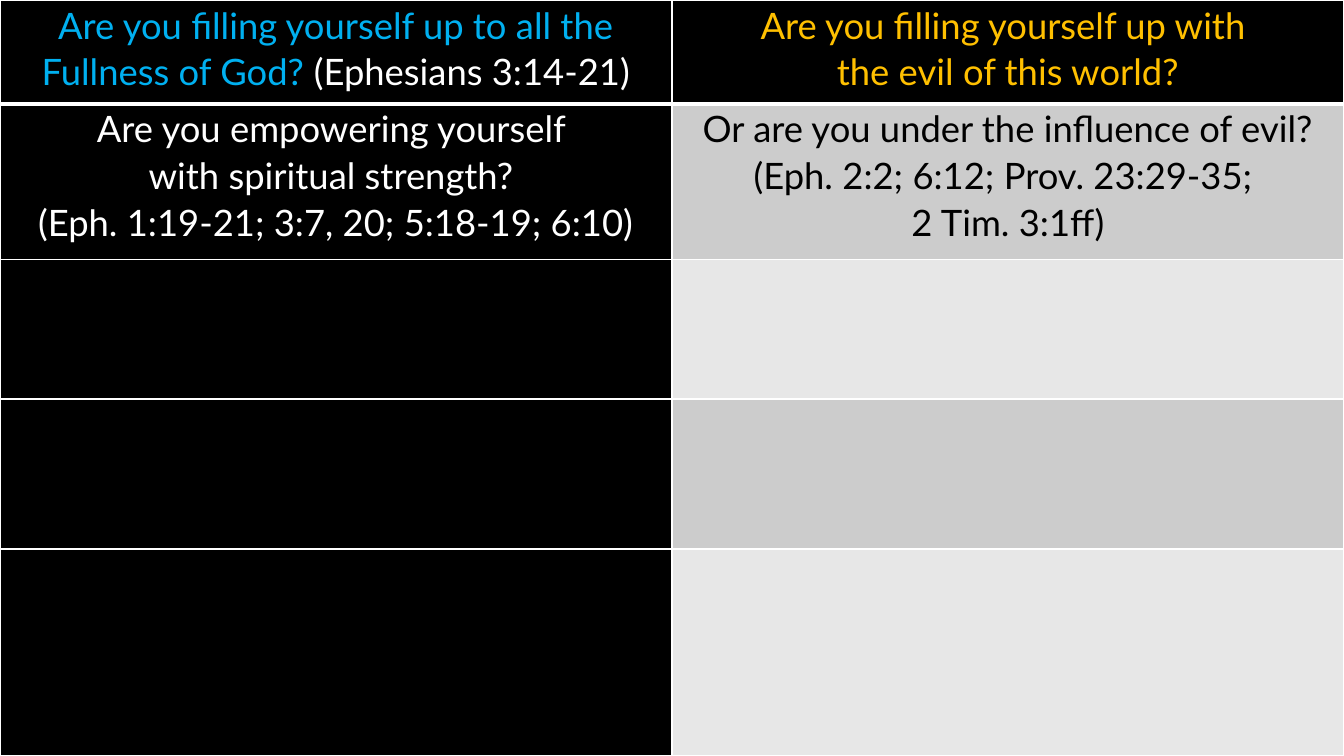
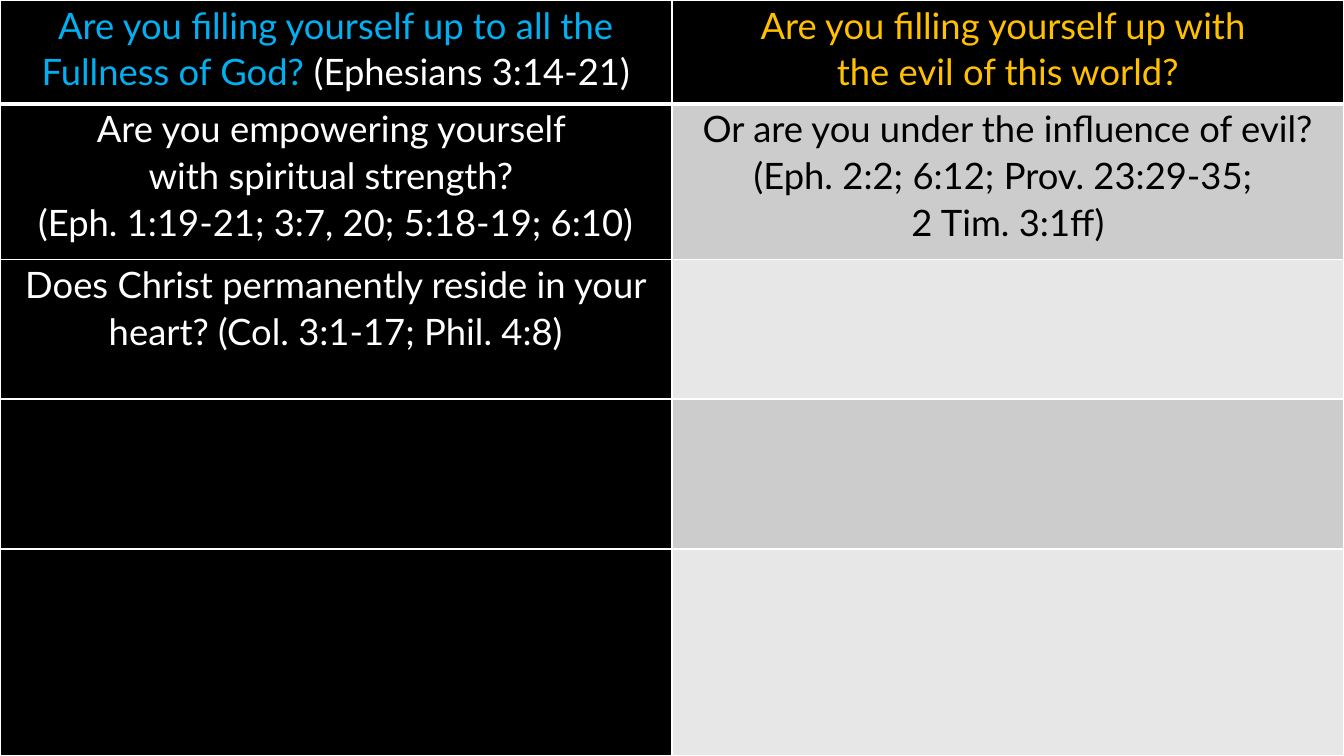
from lxml.etree import SubElement as Sub
from pptx import Presentation
from pptx.dml.color import RGBColor as Rgb
from pptx.enum.text import PP_ALIGN as Align
from pptx.oxml.ns import qn
from pptx.util import Pt

PX = 9525
WIDE, HIGH = 1280, 720
ROWS = [99, 148, 133, 143, 197]
HUES = {
    "black": "000000",
    "white": "FFFFFF",
    "blue": "00B0F0",
    "gold": "FFC000",
    "dark": "CCCCCC",
    "light": "E7E7E7",
}


def write(cell, lines, font="Lato", size=26, align=Align.CENTER, space=1.07):
    frame = cell.text_frame
    for i, line in enumerate(lines):
        para = frame.add_paragraph() if i else frame.paragraphs[0]
        para.alignment = align
        para.line_spacing = space
        for text, hue in line:
            run = para.add_run()
            run.text = text
            run.font.name = font
            run.font.size = Pt(size)
            run.font.color.rgb = Rgb.from_string(HUES[hue])


def border(cell, side, width):
    line = Sub(cell._tc.get_or_add_tcPr(), qn("a:ln" + side), w=str(Pt(width)))
    fill = Sub(line, qn("a:solidFill"))
    Sub(fill, qn("a:srgbClr"), val=HUES["white"])


base = {
    (0, 0): [[("Are you filling yourself up to all the Fullness of God? ", "blue"),
              ("(Ephesians 3:14-21)", "white")]],
    (0, 1): [[("Are you filling yourself up with ", "gold")],
             [("the evil of this world?", "gold")]],
    (1, 0): [[("Are you empowering yourself ", "white")],
             [("with spiritual strength? ", "white")],
             [("(Eph. 1:19-21; 3:7, 20; 5:18-19; 6:10)", "white")]],
    (1, 1): [[("Or are you under the influence of evil? "
               "(Eph. 2:2; 6:12; Prov. 23:29-35; ", "black")],
             [("2 Tim. 3:1ff)", "black")]],
}
heart = {
    (2, 0): [[("Does Christ permanently reside in your heart? "
               "(Col. 3:1-17; Phil. 4:8)", "white")]],
}

deck = Presentation()
deck.slide_width, deck.slide_height = WIDE * PX, HIGH * PX

for words in (base, base | heart):
    slide = deck.slides.add_slide(deck.slide_layouts[6])
    back = slide.background.fill
    back.solid()
    back.fore_color.rgb = Rgb.from_string(HUES["black"])
    table = slide.shapes.add_table(len(ROWS), 2, 0, 0, WIDE * PX, HIGH * PX).table
    for r, tall in enumerate(ROWS):
        table.rows[r].height = tall * PX
        for c in range(2):
            cell = table.cell(r, c)
            cell.margin_left = cell.margin_right = 7 * PX
            cell.margin_top = cell.margin_bottom = 0
            for side in "LRTB":
                thick = (r, side) in ((0, "B"), (1, "T"))
                border(cell, side, 3 if thick else 1)
            hue = "black" if r == 0 or c == 0 else "dark" if r % 2 else "light"
            cell.fill.solid()
            cell.fill.fore_color.rgb = Rgb.from_string(HUES[hue])
            write(cell, words.get((r, c), []))

deck.save("out.pptx")
